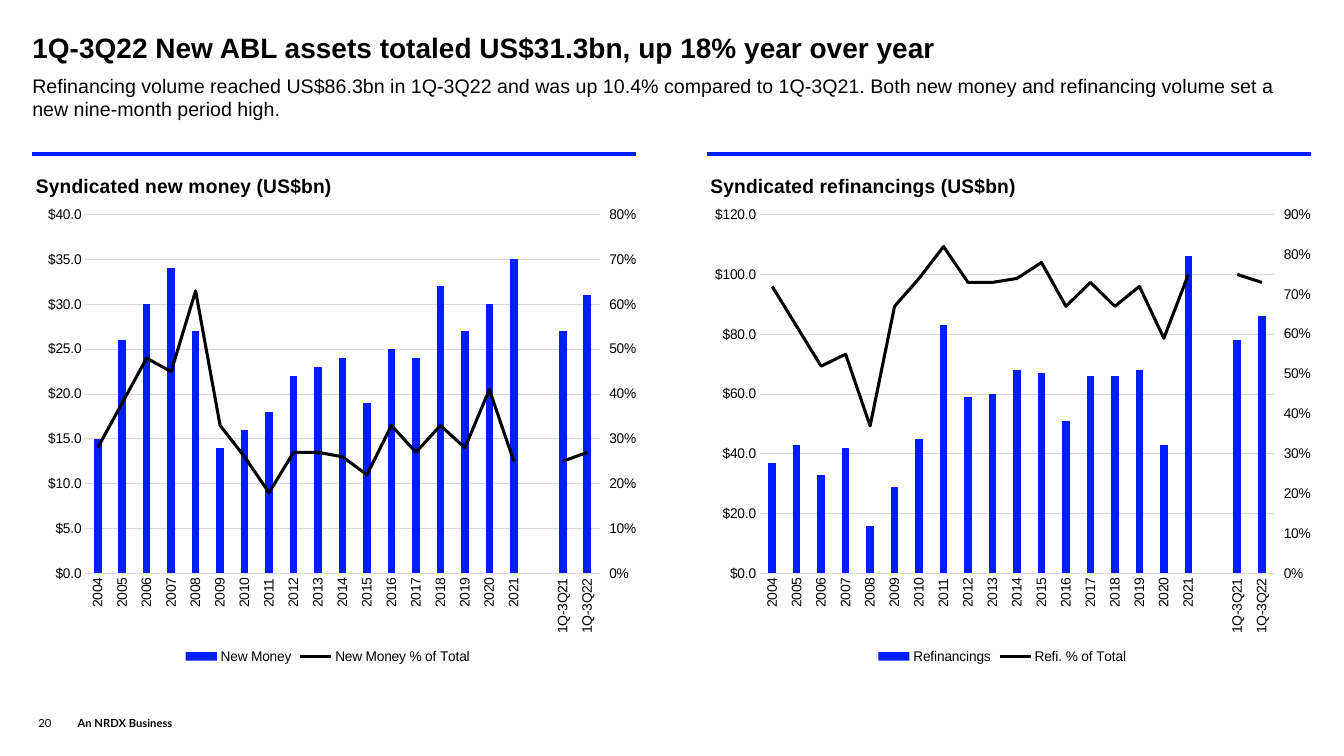
from copy import deepcopy

from lxml import etree
from pptx import Presentation
from pptx import util as u
from pptx.chart import data
from pptx.dml.color import RGBColor
from pptx.enum import chart as kinds
from pptx.enum import shapes, text
from pptx.oxml import ns, parse_xml

COLORS = {"text": "000000", "accent": "001DFF", "grid": "D9D9D9"}
RGB = {name: RGBColor.from_string(code) for name, code in COLORS.items()}
MARGIN, GUTTER, WIDTH = 0.32, 0.7, 12.68
COLUMN = (WIDTH - GUTTER) / 2
YEARS = [str(year) for year in range(2004, 2022)] + ["", "1Q-3Q21", "1Q-3Q22"]

PANELS = [
    {"title": "Syndicated new money (US$bn)",
     "share_max": 0.8, "volume_max": 40, "volume_step": 5,
     "volume": ("New Money", [15, 26, 30, 34, 27, 14, 16, 18, 22, 23, 24, 19, 25,
                              24, 32, 27, 30, 35, None, 27, 31]),
     "share": ("New Money % of Total",
               [0.28, 0.38, 0.48, 0.45, 0.63, 0.33, 0.26, 0.18, 0.27, 0.27, 0.26, 0.22,
                0.33, 0.27, 0.33, 0.28, 0.41, 0.25, None, 0.25, 0.27])},
    {"title": "Syndicated refinancings (US$bn)",
     "share_max": 0.9, "volume_max": 120, "volume_step": 20,
     "volume": ("Refinancings", [37, 43, 33, 42, 16, 29, 45, 83, 59, 60, 68, 67, 51,
                                 66, 66, 68, 43, 106, None, 78, 86]),
     "share": ("Refi. % of Total",
               [0.72, 0.62, 0.52, 0.55, 0.37, 0.67, 0.74, 0.82, 0.73, 0.73, 0.74, 0.78,
                0.67, 0.73, 0.67, 0.72, 0.59, 0.75, None, 0.75, 0.73])},
]

TEXTS = [  # left, top, width, height, size, font, bold, wording
    (MARGIN, 0.34, WIDTH, 0.39, 20, "Arial", True,
     "1Q-3Q22 New ABL assets totaled US$31.3bn, up 18% year over year"),
    (MARGIN, 0.73, WIDTH, 0.64, 14, "Arial", False,
     "Refinancing volume reached US$86.3bn in 1Q-3Q22 and was up 10.4% compared to "
     "1Q-3Q21. Both new money and refinancing volume set a new nine-month period high."),
    (0.38, 7.04, 0.39, 0.2, 8, "Lato", False, "20"),
    (0.77, 7.04, 1.73, 0.2, 8, "Lato", True, "An NRDX Business"),
]


def set_layout(parent, index, **shares):
    """Place a chart part by shares of the chart's size."""
    for old in parent.findall(ns.qn("c:layout")):
        parent.remove(old)
    modes = "".join(f'<c:{axis}Mode val="edge"/>' for axis in "xy")
    sizes = "".join(f'<c:{name} val="{share}"/>' for name, share in shares.items())
    target = '<c:layoutTarget val="inner"/>' if "w" in shares else ""
    parent.insert(index, parse_xml(
        f'<c:layout {ns.nsdecls("c")}><c:manualLayout>{target}{modes}{sizes}'
        '</c:manualLayout></c:layout>'))


def move_to_right_axis(chart, maximum):
    """Turn the second bar series into a line on a percentage axis at the right."""
    area = chart._chartSpace.chart.plotArea
    bars = area.find(ns.qn("c:barChart"))
    series = bars.findall(ns.qn("c:ser"))[1]
    lines = parse_xml(
        f'<c:lineChart {ns.nsdecls("c")}><c:grouping val="standard"/>'
        '<c:varyColors val="0"/><c:marker val="1"/>'
        '<c:axId val="5001"/><c:axId val="5002"/></c:lineChart>')
    lines.insert(2, series)
    bars.addnext(lines)

    left_axis = area.find(ns.qn("c:valAx"))
    category, value = deepcopy(area.find(ns.qn("c:catAx"))), deepcopy(left_axis)
    for parent, name in ((series, "c:invertIfNegative"), (value, "c:majorGridlines")):
        for unwanted in parent.findall(ns.qn(name)):
            parent.remove(unwanted)
    for axis, settings in (
            (category, {"axId": "5001", "delete": "1", "crossAx": "5002"}),
            (value, {"axId": "5002", "axPos": "r", "crossAx": "5001", "crosses": "max",
                     "majorTickMark": "out", "majorUnit": "0.1", "max": str(maximum)})):
        for name, setting in settings.items():
            next(axis.iter(ns.qn(f"c:{name}"))).set("val", setting)
    value.find(ns.qn("c:numFmt")).set("formatCode", "0%")
    left_axis.addnext(value)
    value.addnext(category)


presentation = Presentation()
presentation.slide_width, presentation.slide_height = u.Inches(13.33), u.Inches(7.5)
slide = presentation.slides.add_slide(presentation.slide_layouts[6])

for left, top, width, height, size, font, bold, wording in TEXTS:
    box = slide.shapes.add_textbox(*map(u.Inches, (left, top, width, height)))
    frame = box.text_frame
    frame.margin_left = frame.margin_right = frame.margin_top = frame.margin_bottom = 0
    frame.word_wrap = True
    frame.text = wording
    if font == "Lato":
        frame.vertical_anchor = text.MSO_ANCHOR.BOTTOM
    paragraph = frame.paragraphs[0]
    if size == 20:
        paragraph.line_spacing = 0.9
    style = paragraph.runs[0].font
    style.name, style.size, style.bold = font, u.Pt(size), bold
    style.color.rgb = RGB["text"]

for number, panel in enumerate(PANELS):
    left = MARGIN + number * (COLUMN + GUTTER)
    rule = slide.shapes.add_connector(
        shapes.MSO_CONNECTOR.STRAIGHT, u.Inches(left), u.Inches(1.53),
        u.Inches(left + COLUMN), u.Inches(1.53))
    rule.line.color.rgb, rule.line.width = RGB["accent"], u.Pt(3)
    etree.SubElement(rule._element.spPr, ns.qn("a:effectLst"))

    chart_data = data.CategoryChartData()
    chart_data.categories = YEARS
    chart_data.add_series(*panel["volume"], number_format='"$"#,##0.0')
    chart_data.add_series(*panel["share"], number_format="0%")
    chart = slide.shapes.add_chart(
        kinds.XL_CHART_TYPE.COLUMN_STACKED, u.Inches(left), u.Inches(1.63),
        u.Inches(COLUMN), u.Inches(5), chart_data).chart
    chart.font.name, chart.font.size = "Arial", u.Pt(18)
    chart.font.color.rgb = RGB["text"]

    chart.has_title = True
    chart.chart_title.text_frame.text = panel["title"]
    title_font = chart.chart_title.text_frame.paragraphs[0].runs[0].font
    title_font.name, title_font.size, title_font.bold = "Arial", u.Pt(14), True
    title_font.color.rgb = RGB["text"]
    chart.chart_title.include_in_layout = False
    set_layout(chart.chart_title._element, 1, x=0, y=0.01)

    chart.has_legend = True
    chart.legend.position = kinds.XL_LEGEND_POSITION.BOTTOM
    chart.legend.include_in_layout = False
    chart.legend.font.size = u.Pt(10)

    years, amounts = chart.category_axis, chart.value_axis
    for axis in (years, amounts):
        axis.major_tick_mark = axis.minor_tick_mark = kinds.XL_TICK_MARK.NONE
        axis.tick_labels.font.size = u.Pt(10)
    years.format.line.color.rgb, years.format.line.width = RGB["grid"], u.Pt(0.75)
    years._element.txPr.bodyPr.set("rot", "-5400000")
    amounts.minimum_scale, amounts.maximum_scale = 0, panel["volume_max"]
    amounts.major_unit = panel["volume_step"]
    amounts.format.line.fill.background()
    amounts.tick_labels.number_format = '"$"#,##0.0'
    amounts.tick_labels.number_format_is_linked = False
    grid = amounts.major_gridlines.format.line
    grid.color.rgb, grid.width = RGB["grid"], u.Pt(0.75)

    move_to_right_axis(chart, panel["share_max"])
    set_layout(chart._chartSpace.chart.plotArea, 0, x=0.09, y=0.1, w=0.87, h=0.712)
    bars, lines = chart.plots
    bars.gap_width, bars.overlap, bars.vary_by_categories = 219, 100, False
    bars.series[0].format.fill.solid()
    bars.series[0].format.fill.fore_color.rgb = RGB["accent"]
    share = lines.series[0]
    share.smooth = False
    share.marker.style = kinds.XL_MARKER_STYLE.NONE
    share.format.line.color.rgb, share.format.line.width = RGB["text"], u.Pt(2.25)

presentation.save("out.pptx")
